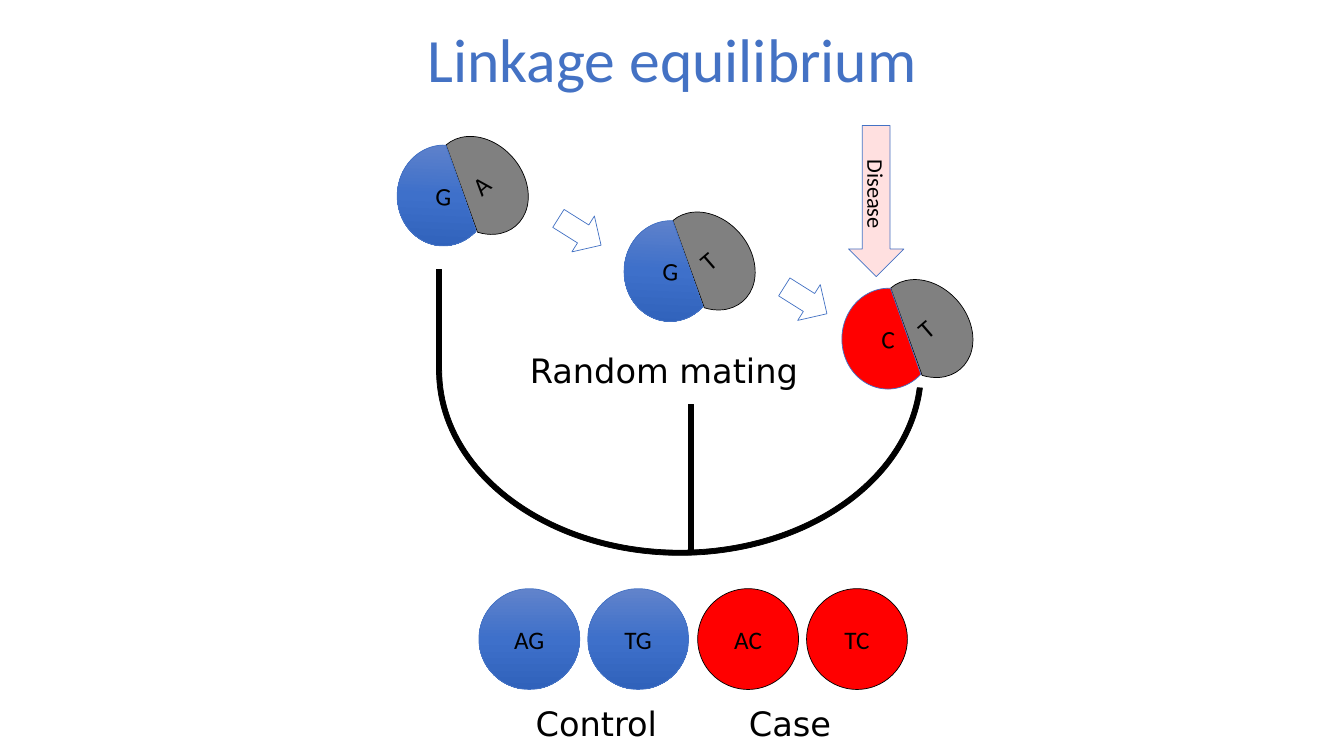
from copy import deepcopy

from lxml.etree import SubElement
from pptx import Presentation
from pptx.dml.color import RGBColor
from pptx.enum.shapes import MSO_SHAPE as Shape
from pptx.enum.text import MSO_ANCHOR as Anchor, MSO_AUTO_SIZE as AutoSize, PP_ALIGN as Align
from pptx.oxml.ns import qn
from pptx.util import Pt

PX = 9144  # EMU, 100 px to the inch
BLACK, BLUE, GREY, RED = "000000", "4472C4", "808080", "FF0000"
BLUE_SHADES = ("6183CB", "3E70CA", "3062BB")


def rgb(hex_code):
    return RGBColor.from_string(hex_code)


def emu(*lengths):
    return [length * PX for length in lengths]


class Diagram:
    body_font, label_font = "Calibri", "DejaVu Sans"
    line_width = Pt(0.5)

    def __init__(self, page):
        self.page = page

    def set_text(self, frame, text, size, font, color):
        frame.word_wrap = True
        para = frame.paragraphs[0]
        para.text = text
        para.alignment = Align.CENTER
        para.font.size = Pt(size)
        para.font.name = font
        para.font.color.rgb = rgb(color)
        return para

    def paint(self, shape, fill, alpha=None):
        """Fill with a hex colour, a tuple of evenly spaced shades, or nothing."""
        if fill is None:
            shape.fill.background()
        elif isinstance(fill, tuple):
            shape.fill.gradient()
            shape.fill.gradient_angle = 270
            stop_list = shape._element.spPr.find(".//" + qn("a:gsLst"))
            while len(stop_list) < len(fill):
                stop_list.append(deepcopy(stop_list[0]))
            for index, (stop, shade) in enumerate(zip(shape.fill.gradient_stops, fill)):
                stop.position = index / (len(fill) - 1)
                stop.color.rgb = rgb(shade)
        else:
            shape.fill.solid()
            shape.fill.fore_color.rgb = rgb(fill)
        if alpha is not None:
            color = shape._element.spPr.find(qn("a:solidFill"))[0]
            SubElement(color, qn("a:alpha")).set("val", str(alpha * 1000))

    def shape(self, kind, at, fill=None, line=BLACK, text="", size=18,
              rotation=0, flip=None, alpha=None, adjustments=()):
        shape = self.page.shapes.add_shape(kind, *emu(*at))
        shape.shadow.inherit = False
        shape.rotation = rotation
        if flip:
            shape._element.spPr.find(qn("a:xfrm")).set(flip, "1")
        for index, value in enumerate(adjustments):
            shape.adjustments[index] = value
        self.paint(shape, fill, alpha)
        shape.line.color.rgb = rgb(line)
        shape.line.width = self.line_width
        if text:
            shape.text_frame.vertical_anchor = Anchor.MIDDLE
            self.set_text(shape.text_frame, text, size, self.body_font, BLACK)

    def title(self, text, at):
        box = self.page.shapes.add_textbox(*emu(*at))
        box.text_frame.vertical_anchor = Anchor.MIDDLE
        para = self.set_text(box.text_frame, text, 44, self.body_font, BLUE)
        para.line_spacing = 0.9

    def label(self, text, at):
        box = self.page.shapes.add_textbox(*emu(*at))
        self.set_text(box.text_frame, text, 24, self.label_font, BLACK)
        box.text_frame.auto_size = AutoSize.SHAPE_TO_FIT_TEXT

    def haplotype(self, left, top, allele, partner, fill):
        """Two chords that form one split disc, with an allele on each half."""
        self.shape(Shape.CHORD, (left + 41, top - 13, 84, 106), GREY,
                   text=partner, rotation=319.2, flip="flipH")
        self.shape(Shape.CHORD, (left, top, 92, 100), fill, BLUE, allele, rotation=2.5)


def main():
    deck = Presentation()
    deck.slide_width, deck.slide_height = emu(1333, 750)
    diagram = Diagram(deck.slides.add_slide(deck.slide_layouts[6]))

    diagram.title("Linkage equilibrium", (217, 0, 900, 125))
    for haplotype in ((394, 144, "G", "A", BLUE_SHADES),
                      (619, 219, "G", "T", BLUE_SHADES),
                      (835, 286, "C", "T", RED)):
        diagram.haplotype(*haplotype)
    for left, top in ((550, 209), (774, 277)):
        diagram.shape(Shape.RIGHT_ARROW, (left, top, 50, 42), line=BLUE, rotation=32.2)

    diagram.shape(Shape.BLOCK_ARC, (433, 184, 483, 367), BLACK, flip="flipV",
                  adjustments=(108, 213.5, 0.014))
    for bar in ((683, 401, 5, 145), (433, 267, 5, 100)):
        diagram.shape(Shape.RECTANGLE, bar, BLACK)

    offspring = (("AG", BLUE_SHADES, BLUE), ("TG", BLUE_SHADES, BLUE),
                 ("AC", RED, BLACK), ("TC", RED, BLACK))
    for index, (genotype, fill, line) in enumerate(offspring):
        left = 475 + round(index * 325 / 3)
        diagram.shape(Shape.OVAL, (left, 584, 100, 100), fill, line, genotype)

    diagram.label("Random mating", (475, 342, 367, 50))
    diagram.label("Control", (458, 692, 267, 50))
    diagram.label("Case", (650, 692, 267, 50))
    diagram.shape(Shape.RIGHT_ARROW, (794, 172, 150, 55), RED, BLUE, "Disease", 16,
                  rotation=90, alpha=12)

    deck.save("out.pptx")


if __name__ == "__main__":
    main()
